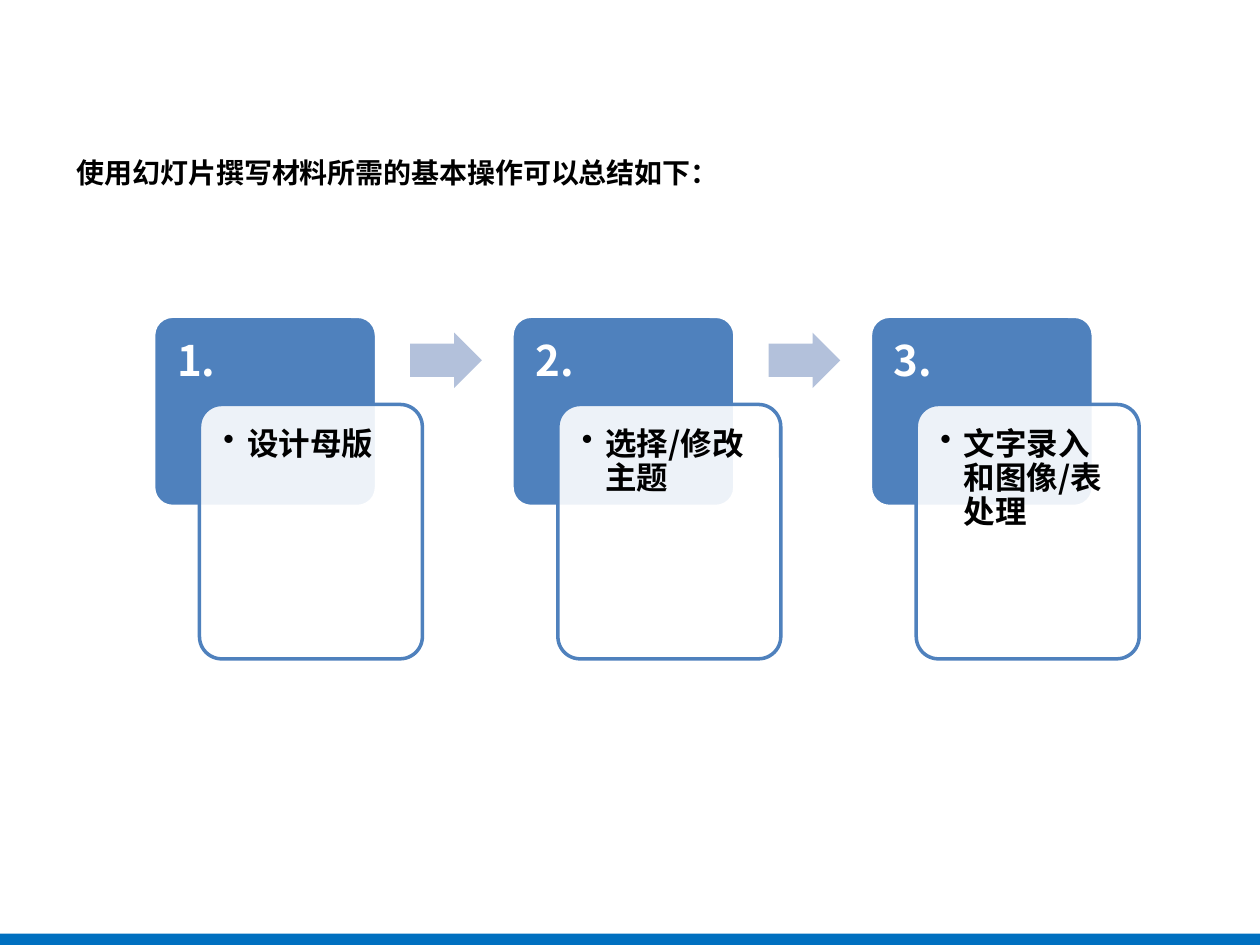
from dataclasses import dataclass

from lxml import etree
from pptx import Presentation
from pptx.dml.color import RGBColor
from pptx.enum.shapes import MSO_SHAPE
from pptx.enum.text import MSO_ANCHOR, PP_ALIGN
from pptx.oxml.ns import qn
from pptx.shapes.autoshape import Shape
from pptx.slide import Slide
from pptx.text.text import TextFrame
from pptx.util import Pt

RECTANGLE = MSO_SHAPE.RECTANGLE
ROUNDED = MSO_SHAPE.ROUNDED_RECTANGLE
RIGHT_ARROW = MSO_SHAPE.RIGHT_ARROW
TOP, MIDDLE = MSO_ANCHOR.TOP, MSO_ANCHOR.MIDDLE
LEFT = PP_ALIGN.LEFT

BLACK = RGBColor(0x00, 0x00, 0x00)
WHITE = RGBColor(0xFF, 0xFF, 0xFF)
BLUE = RGBColor(0x4F, 0x81, 0xBD)
PALE_BLUE = RGBColor(0xB3, 0xC1, 0xDB)
FOOTER_BLUE = RGBColor(0x00, 0x70, 0xC0)
FONT = "Noto Sans CJK SC"

FIRST_LEFT = 87.8
STEP_PITCH = 204.8
STEP_WIDTH = 127.4
TILE_TOP, TILE_HEIGHT = 180.7, 108.7
NUMBER_HEIGHT = 51.1
CARD_SHIFT, CARD_TOP, CARD_HEIGHT = 26.2, 231.1, 145.4
CARD_PADDING = 3.7
ARROW_SHIFT, ARROW_TOP = 146.6, 190.1
ARROW_WIDTH, ARROW_HEIGHT = 41, 31.7
BULLET_INDENT = 13.5


@dataclass(frozen=True)
class Box:
    left: float
    top: float
    width: float
    height: float

    def lengths(self) -> tuple[Pt, Pt, Pt, Pt]:
        return Pt(self.left), Pt(self.top), Pt(self.width), Pt(self.height)


@dataclass(frozen=True)
class Step:
    number: str
    action: str


STEPS = (
    Step("1.", "设计母版"),
    Step("2.", "选择/修改主题"),
    Step("3.", "文字录入和图像/表处理"),
)


def add_figure(slide: Slide, kind: int, box: Box, fill: RGBColor,
               outline: RGBColor | None = None,
               adjustments: tuple[float, ...] = ()) -> Shape:
    figure = slide.shapes.add_shape(kind, *box.lengths())
    figure.shadow.inherit = False
    figure.fill.solid()
    figure.fill.fore_color.rgb = fill
    if outline is None:
        figure.line.fill.background()
    else:
        figure.line.color.rgb = outline
        figure.line.width = Pt(2)
    for index, value in enumerate(adjustments):
        figure.adjustments[index] = value
    return figure


def set_opacity(figure: Shape, percent: int) -> None:
    color = figure.fill._xPr.find(qn("a:solidFill"))[0]
    etree.SubElement(color, qn("a:alpha"), val=str(percent * 1000))


def write(frame: TextFrame, wording: str, size: float, color: RGBColor,
          line_spacing: float, space_after: float = 0,
          bulleted: bool = False) -> None:
    frame.word_wrap = True
    paragraph = frame.paragraphs[0]
    paragraph.alignment = LEFT
    paragraph.line_spacing = line_spacing
    paragraph.space_after = Pt(space_after)
    if bulleted:
        properties = paragraph._p.get_or_add_pPr()
        properties.set("marL", str(Pt(BULLET_INDENT)))
        properties.set("indent", str(-Pt(BULLET_INDENT)))
        etree.SubElement(properties, qn("a:buChar"), char="•")
    run = paragraph.add_run()
    run.text = wording
    run.font.name = FONT
    run.font.size = Pt(size)
    run.font.bold = True
    run.font.color.rgb = color
    etree.SubElement(run.font._element, qn("a:ea"), typeface=FONT)


def add_label(slide: Slide, box: Box, padding: float, bottom: float) -> TextFrame:
    frame = slide.shapes.add_textbox(*box.lengths()).text_frame
    frame.vertical_anchor = TOP
    frame.margin_left = frame.margin_top = frame.margin_right = Pt(padding)
    frame.margin_bottom = Pt(bottom)
    return frame


def add_step(slide: Slide, step: Step, left: float) -> None:
    add_figure(slide, ROUNDED, Box(left, TILE_TOP, STEP_WIDTH, TILE_HEIGHT),
               BLUE, WHITE, (0.1,))
    number = add_label(slide, Box(left, TILE_TOP, STEP_WIDTH, NUMBER_HEIGHT),
                       13.4, 7.2)
    write(number, step.number, 24, WHITE, 0.9, 8.4)

    card_box = Box(left + CARD_SHIFT, CARD_TOP, STEP_WIDTH, CARD_HEIGHT)
    card = add_figure(slide, ROUNDED, card_box, WHITE, BLUE, (0.1,))
    set_opacity(card, 90)
    action_box = Box(card_box.left + CARD_PADDING, card_box.top + CARD_PADDING,
                     card_box.width - 2 * CARD_PADDING,
                     card_box.height - 2 * CARD_PADDING)
    action = add_label(slide, action_box, 10, 10)
    write(action, step.action, 18, BLACK, 0.9, 2.7, bulleted=True)


def add_arrow(slide: Slide, left: float) -> None:
    add_figure(slide, RIGHT_ARROW,
               Box(left, ARROW_TOP, ARROW_WIDTH, ARROW_HEIGHT),
               PALE_BLUE, adjustments=(0.6, 0.5))


def main() -> None:
    presentation = Presentation()
    presentation.slide_width, presentation.slide_height = Pt(720), Pt(540)
    slide = presentation.slides.add_slide(presentation.slide_layouts[5])

    title = slide.shapes.title
    title.left, title.top, title.width, title.height = Box(
        36.7, 77, 646.6, 33.1).lengths()
    title.text_frame.vertical_anchor = MIDDLE
    write(title.text_frame, "使用幻灯片撰写材料所需的基本操作可以总结如下：",
          16, BLACK, 1.5)

    add_figure(slide, RECTANGLE, Box(-0.7, 533.5, 722, 8.6), FOOTER_BLUE)
    for index, step in enumerate(STEPS):
        left = FIRST_LEFT + index * STEP_PITCH
        add_step(slide, step, left)
        if index < len(STEPS) - 1:
            add_arrow(slide, left + ARROW_SHIFT)

    presentation.save("out.pptx")


if __name__ == "__main__":
    main()
